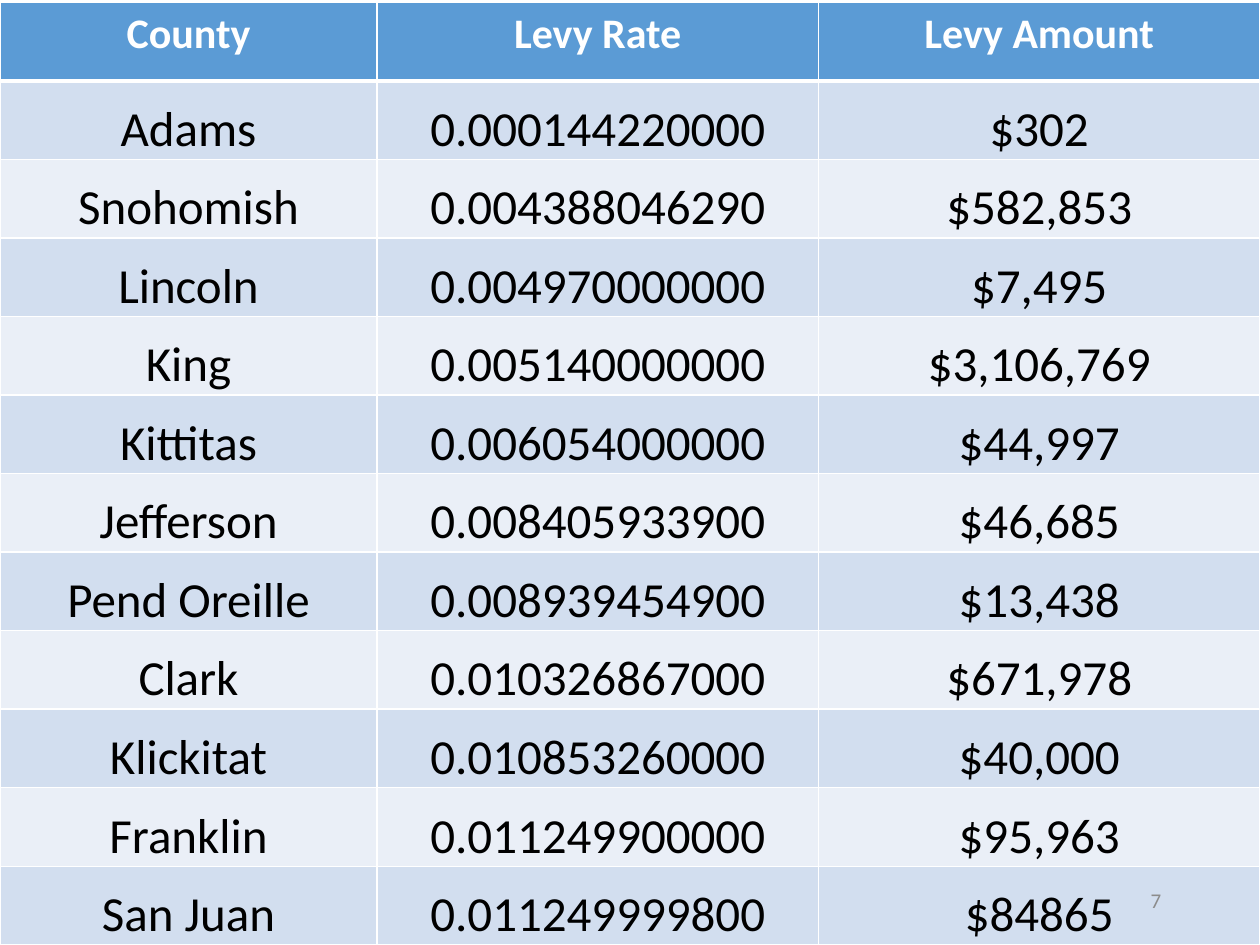
from typing import NamedTuple

from pptx import Presentation
from pptx.dml.color import RGBColor
from pptx.enum.text import MSO_ANCHOR as Anchor, PP_ALIGN as Align
from pptx.oxml import parse_xml
from pptx.oxml.ns import nsdecls
from pptx.util import Cm, Pt

FONT = "Calibri"
WHITE = "FFFFFF"
ROW_COUNT_HEIGHT = 19.0
COLUMN_WIDTHS = (7.6, 8.9, 8.9)
BANDS = ("D2DEEF", "EAEFF7")
HEADINGS = ("County", "Levy Rate", "Levy Amount")


class Levy(NamedTuple):
    county: str
    rate: str
    amount: str


class CellStyle(NamedTuple):
    fill: str
    color: str
    size: int
    bold: bool
    anchor: Anchor
    margins: tuple[float, float, float, float]  # left, top, right, bottom
    top_line: int = 1
    bottom_line: int = 1


LEVIES = (
    Levy("Adams", "0.000144220000", "$302"),
    Levy("Snohomish", "0.004388046290", "$582,853"),
    Levy("Lincoln", "0.004970000000", "$7,495"),
    Levy("King", "0.005140000000", "$3,106,769"),
    Levy("Kittitas", "0.006054000000", "$44,997"),
    Levy("Jefferson", "0.008405933900", "$46,685"),
    Levy("Pend Oreille", "0.008939454900", "$13,438"),
    Levy("Clark", "0.010326867000", "$671,978"),
    Levy("Klickitat", "0.010853260000", "$40,000"),
    Levy("Franklin", "0.011249900000", "$95,963"),
    Levy("San Juan", "0.011249999800", "$84865"),
)
HEADER = CellStyle("5B9BD5", WHITE, 24, True, Anchor.TOP,
                   (0.25, 0.13, 0.25, 0.13), bottom_line=3)


def rgb(color: str) -> RGBColor:
    return RGBColor.from_string(color)


def format_text(frame, size: int, color: str, align: Align, bold: bool = False) -> None:
    for para in frame.paragraphs:
        para.alignment = align
        for span in para.runs:
            span.font.name = FONT
            span.font.size = Pt(size)
            span.font.bold = bold
            span.font.color.rgb = rgb(color)


def set_borders(cell, style: CellStyle) -> None:
    properties = cell._tc.get_or_add_tcPr()
    widths = {"L": 1, "R": 1, "T": style.top_line, "B": style.bottom_line}
    for side, width in widths.items():
        properties.append(parse_xml(
            f'<a:ln{side} {nsdecls("a")} w="{Pt(width)}"><a:solidFill>'
            f'<a:srgbClr val="{WHITE}"/></a:solidFill></a:ln{side}>'))


def fill_row(cells, texts: tuple[str, ...], style: CellStyle) -> None:
    for cell, text in zip(cells, texts):
        cell.text_frame.text = text
        format_text(cell.text_frame, style.size, style.color, Align.CENTER, style.bold)
        cell.vertical_anchor = style.anchor
        (cell.margin_left, cell.margin_top,
         cell.margin_right, cell.margin_bottom) = map(Cm, style.margins)
        set_borders(cell, style)
        cell.fill.solid()
        cell.fill.fore_color.rgb = rgb(style.fill)


def add_levy_table(page) -> None:
    row_count = len(LEVIES) + 1
    table = page.shapes.add_table(
        row_count, len(HEADINGS), Cm(0), Cm(0.05),
        Cm(sum(COLUMN_WIDTHS)), Cm(ROW_COUNT_HEIGHT)).table
    for column, width in zip(table.columns, COLUMN_WIDTHS):
        column.width = Cm(width)
    for row in table.rows:
        row.height = Cm(ROW_COUNT_HEIGHT / row_count)

    fill_row(table.rows[0].cells, HEADINGS, HEADER)
    for index, levy in enumerate(LEVIES):
        style = CellStyle(BANDS[index % 2], "000000", 28, False, Anchor.BOTTOM,
                          (0.02, 0.02, 0.02, 0),
                          top_line=1 if index else HEADER.bottom_line)
        fill_row(table.rows[index + 1].cells, levy, style)


def add_page_number(page, number: str) -> None:
    box = page.shapes.add_textbox(Cm(17.94), Cm(17.65), Cm(5.72), Cm(1.01))
    frame = box.text_frame
    frame.word_wrap = True
    frame.vertical_anchor = Anchor.MIDDLE
    frame.text = number
    format_text(frame, 12, "8C8C8C", Align.RIGHT)


def main() -> None:
    deck = Presentation()
    deck.slide_width, deck.slide_height = Cm(25.4), Cm(19.05)
    page = deck.slides.add_slide(deck.slide_layouts[6])
    add_levy_table(page)
    add_page_number(page, "7")
    deck.save("out.pptx")


if __name__ == "__main__":
    main()
